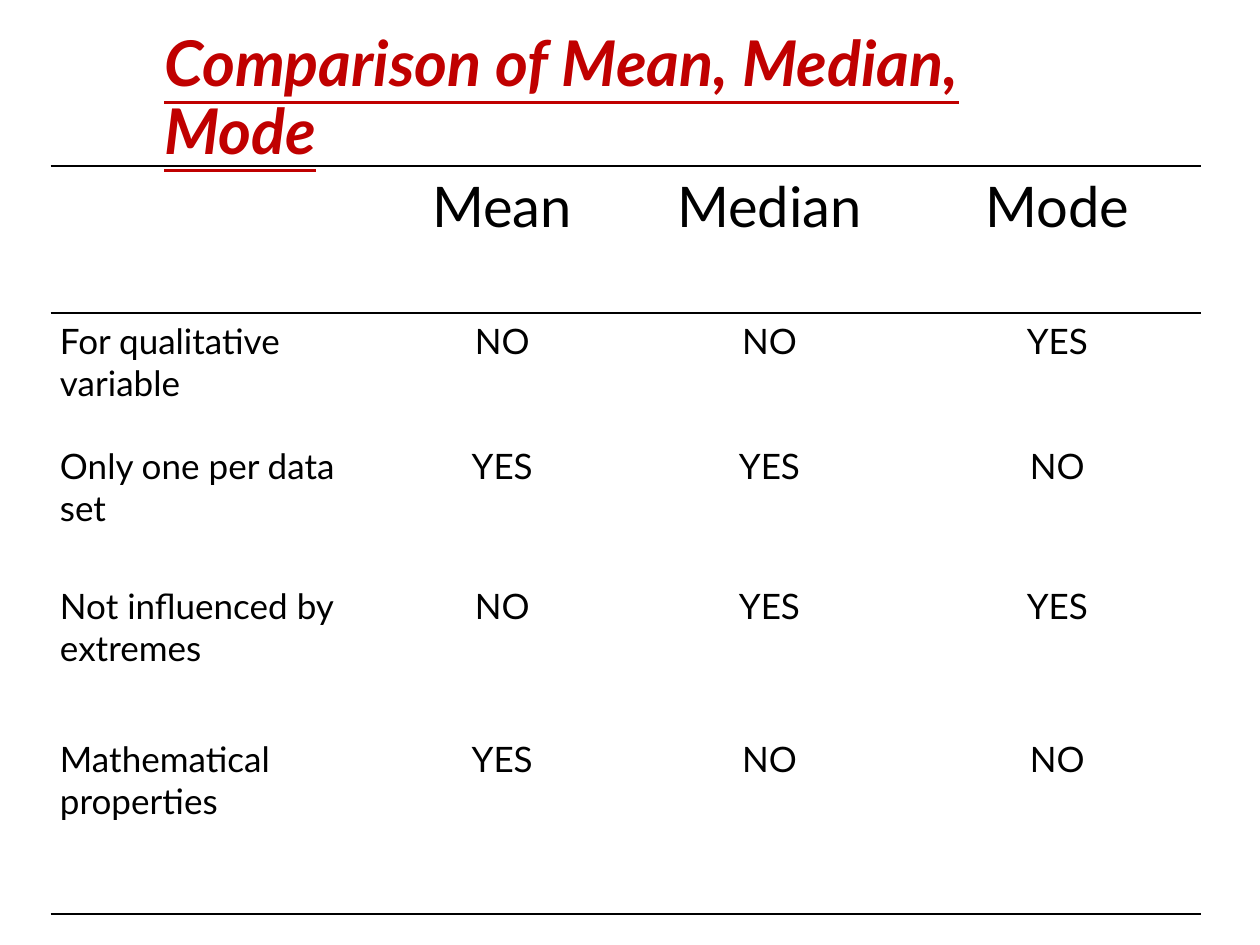
"""Build a slide with a table comparing mean, median and mode."""
from lxml.etree import SubElement
from pptx import Presentation
from pptx.dml.color import RGBColor
from pptx.enum.text import MSO_ANCHOR, PP_ALIGN
from pptx.oxml.ns import qn
from pptx.util import Pt

TITLE = "Comparison of Mean, Median, Mode"
ROWS = [
    ("", "Mean", "Median", "Mode"),
    ("For qualitative  variable", "NO", "NO", "YES"),
    ("Only one per data set", "YES", "YES", "NO"),
    ("Not influenced by extremes", "NO", "YES", "YES"),
    ("Mathematical properties", "YES", "NO", "NO"),
]
COL_WIDTHS = [187.5, 141, 164.5, 164.5]
ROW_HEIGHTS = [84, 71.5, 80, 87.5, 104.5]
RULED_SIDES = {0: ("T", "B"), 1: ("T",), len(ROWS) - 1: ("B",)}
COLORS = {"title": "C00000", "text": "000000", "rule": "000000"}
FONT = "Lato"


def style_run(r, size, color):
    r.font.name = FONT
    r.font.size = Pt(size)
    r.font.color.rgb = RGBColor.from_string(COLORS[color])


def set_borders(cell, ruled):
    tc_pr = cell._tc.get_or_add_tcPr()
    for side in "LRTB":
        ln = SubElement(tc_pr, qn(f"a:ln{side}"), w=str(Pt(1)))
        if side in ruled:
            fill = SubElement(ln, qn("a:solidFill"))
            SubElement(fill, qn("a:srgbClr"), val=COLORS["rule"])
        else:
            SubElement(ln, qn("a:noFill"))


def add_title(s):
    tf = s.shapes.add_textbox(Pt(88.5), Pt(12), Pt(519), Pt(90)).text_frame
    tf.word_wrap = True
    tf.vertical_anchor = MSO_ANCHOR.MIDDLE
    tf.margin_left = tf.margin_right = Pt(5.3)
    tf.margin_top = tf.margin_bottom = Pt(2.7)
    p = tf.paragraphs[0]
    p.text = TITLE
    p.line_spacing = 0.9
    r = p.runs[0]
    style_run(r, 36, "title")
    r.font.bold = r.font.italic = r.font.underline = True


def add_comparison(s):
    table = s.shapes.add_table(
        len(ROWS), len(COL_WIDTHS), Pt(29), Pt(95),
        Pt(sum(COL_WIDTHS)), Pt(sum(ROW_HEIGHTS))).table
    table.first_row = table.horz_banding = False
    for col, width in zip(table.columns, COL_WIDTHS):
        col.width = Pt(width)
    for i, (values, height) in enumerate(zip(ROWS, ROW_HEIGHTS)):
        table.rows[i].height = Pt(height)
        for j, value in enumerate(values):
            cell = table.cell(i, j)
            set_borders(cell, RULED_SIDES.get(i, ()))
            cell.fill.background()
            cell.margin_left = cell.margin_right = Pt(5.3)
            cell.margin_top = cell.margin_bottom = Pt(3.6)
            p = cell.text_frame.paragraphs[0]
            p.text = value
            p.alignment = PP_ALIGN.CENTER if j else PP_ALIGN.LEFT
            for r in p.runs:
                style_run(r, 20 if i else 32, "text")


def main():
    prs = Presentation()
    prs.slide_width, prs.slide_height = Pt(720), Pt(540)
    s = prs.slides.add_slide(prs.slide_layouts[6])
    add_title(s)
    add_comparison(s)
    prs.save("out.pptx")


if __name__ == "__main__":
    main()
